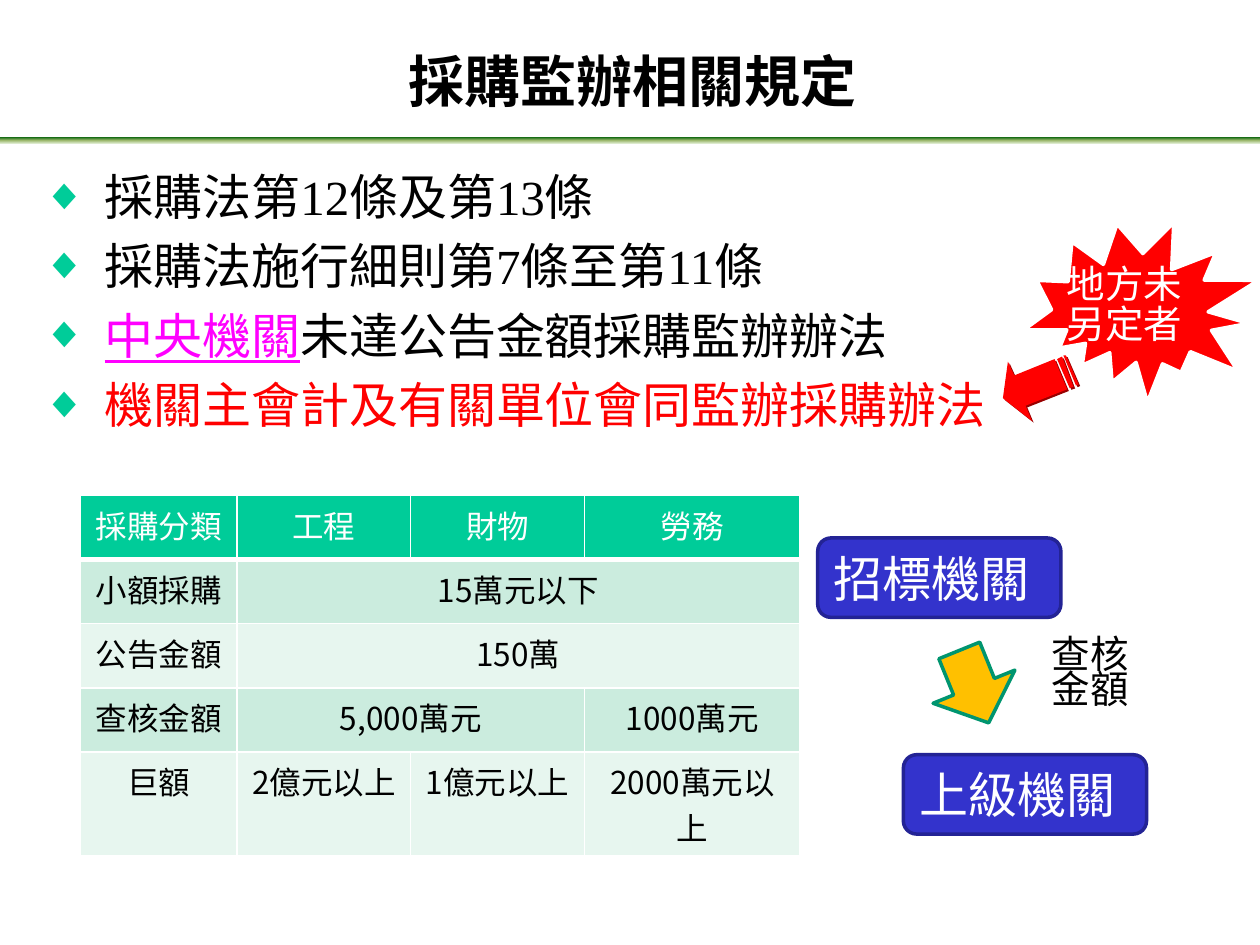
import copy
import pptx
import pptx.util
import pptx.dml.color
import pptx.enum.shapes
import pptx.enum.text
import pptx.oxml
import pptx.oxml.ns
import lxml.etree

Inches = pptx.util.Inches
Pt = pptx.util.Pt
RGB = pptx.dml.color.RGBColor.from_string
SHAPE = pptx.enum.shapes.MSO_SHAPE
ALIGN = pptx.enum.text.PP_ALIGN
ANCHOR = pptx.enum.text.MSO_ANCHOR
NO_FIT = pptx.enum.text.MSO_AUTO_SIZE.NONE
qn = pptx.oxml.ns.qn
SANS, SERIF, LABEL = "Noto Sans CJK SC", "Times New Roman", "Calibri"
COLORS = {
    "black": "000000", "white": "FFFFFF", "red": "FF0000", "magenta": "FF00FF",
    "teal": "00CC99", "teal_dark": "00956F", "mint": "CBECDE", "pale": "E7F6EF",
    "blue": "3333CC", "navy": "232395", "amber": "FFC000", "maroon": "990000",
    "rule_dark": "156B13", "rule_mid": "9CB86E", "rule_light": "DDEBCF",
}


def style(paragraph, size, font, color, align=ALIGN.LEFT):
    paragraph.alignment = align
    paragraph.font.size = Pt(size)
    paragraph.font.name = font
    paragraph.font.color.rgb = RGB(COLORS[color])


def add_shape(kind, box, fill, line=None, rotation=0):
    shape = slide.shapes.add_shape(kind, *map(Inches, box))
    shape.shadow.inherit = False
    shape.rotation = rotation
    shape.fill.solid()
    shape.fill.fore_color.rgb = RGB(COLORS[fill])
    if line:
        shape.line.color.rgb = RGB(COLORS[line])
        shape.line.width = Pt(2)
    else:
        shape.line.fill.background()
    return shape


deck = pptx.Presentation()
deck.slide_width, deck.slide_height = Inches(10), Inches(7.5)
slide = deck.slides.add_slide(deck.slide_layouts[1])

title_rule = add_shape(SHAPE.RECTANGLE, (0, 1.09, 10, 0.05), "rule_dark")
title_rule.fill.gradient()
title_rule.fill.gradient_angle = 270
stop_list = title_rule.element.xpath(".//a:gsLst")[0]
stop_list.insert(1, copy.deepcopy(stop_list[0]))
rule_stops = zip(title_rule.fill.gradient_stops, ("rule_dark", "rule_mid", "rule_light"))
for step, (stop, color) in enumerate(rule_stops):
    stop.position = step / 2
    stop.color.rgb = RGB(COLORS[color])

title = slide.shapes.title
title.left, title.top, title.width, title.height = map(Inches, (0.45, 0.32, 9.14, 0.95))
title.text_frame.text = "採購監辦相關規定"
title.text_frame.auto_size = NO_FIT
title.text_frame.vertical_anchor = ANCHOR.TOP
style(title.text_frame.paragraphs[0], 32, SANS, "black", ALIGN.CENTER)
title.text_frame.paragraphs[0].font.bold = True

regulations = slide.placeholders[1]
regulations.left, regulations.top, regulations.width, regulations.height = map(
    Inches, (0.24, 1.27, 9.06, 2.6))
regulations.text_frame.auto_size = NO_FIT
REGULATIONS = [
    [("採購法第12條及第13條", "black")],
    [("採購法施行細則第7條至第11條", "black")],
    [("中央機關", "magenta"), ("未達公告金額採購監辦辦法", "black")],
    [("機關主會計及有關單位會同監辦採購辦法", "red")],
]
for index, parts in enumerate(REGULATIONS):
    frame = regulations.text_frame
    regulation = frame.add_paragraph() if index else frame.paragraphs[0]
    regulation.space_before = Pt(6 if index else 0)
    properties = regulation._p.get_or_add_pPr()
    properties.set("marL", str(Inches(0.49)))
    properties.set("indent", str(-Inches(0.49)))
    bullet_color = lxml.etree.SubElement(properties, qn("a:buClr"))
    lxml.etree.SubElement(bullet_color, qn("a:srgbClr"), val=COLORS["teal"])
    lxml.etree.SubElement(properties, qn("a:buSzPct"), val="90000")
    lxml.etree.SubElement(properties, qn("a:buChar"), char="◆")
    style(regulation, 28, SERIF, parts[0][1], ALIGN.JUSTIFY)
    for words, color in parts:
        run = regulation.add_run()
        run.text = words
        if len(parts) > 1:
            run.font.color.rgb = RGB(COLORS[color])
            run.font.underline = color == "magenta"

THRESHOLDS = [
    ["採購分類", "工程", "財物", "勞務"],
    ["小額採購", "15萬元以下", "", ""],
    ["公告金額", "150萬", "", ""],
    ["查核金額", "5,000萬元", "", "1000萬元"],
    ["巨額", "2億元以上", "1億元以上", "2000萬元以上"],
]
thresholds = slide.shapes.add_table(
    5, 4, Inches(0.64), Inches(3.93), Inches(5.71), Inches(2.55)).table
for column, width in zip(thresholds.columns, (1.24, 1.38, 1.38, 1.71)):
    column.width = Inches(width)
for r, row in enumerate(THRESHOLDS):
    thresholds.rows[r].height = Inches(0.51)
    for c, words in enumerate(row):
        cell = thresholds.cell(r, c)
        cell.text = words
        style(cell.text_frame.paragraphs[0], 18, SANS, "black" if r else "white", ALIGN.CENTER)
        cell_properties = cell._tc.get_or_add_tcPr()
        for side in "LRTB":
            heavy = (r, side) in ((0, "B"), (1, "T"))
            border = lxml.etree.SubElement(
                cell_properties, qn(f"a:ln{side}"), w=str(Pt(3 if heavy else 1)))
            border_fill = lxml.etree.SubElement(border, qn("a:solidFill"))
            lxml.etree.SubElement(border_fill, qn("a:srgbClr"), val=COLORS["white"])
        cell.fill.solid()
        fill = "teal" if r == 0 else "mint" if r % 2 else "pale"
        cell.fill.fore_color.rgb = RGB(COLORS[fill])
for r, last in ((1, 3), (2, 3), (3, 2)):
    thresholds.cell(r, 1).merge(thresholds.cell(r, last))

for words, left, top in (("招標機關", 6.49, 4.27), ("上級機關", 7.17, 5.99)):
    agency = add_shape(SHAPE.ROUNDED_RECTANGLE, (left, top, 1.93, 0.63), "blue", "navy")
    agency.text_frame.text = words
    style(agency.text_frame.paragraphs[0], 28, SANS, "white")

add_shape(SHAPE.EXPLOSION2, (8.3, 1.6, 1.59, 1.76), "red", "white", 55.6)
add_shape(SHAPE.UP_ARROW, (7.38, 5.14, 0.7, 0.62), "amber", "teal_dark", 157.9)

LABELS = [
    ("地方未另定者", (8.37, 2.06, 1.2, 0.77), 23, "white"),
    ("查核金額", (8.25, 5.04, 0.88, 0.67), 20, "black"),
]
for words, box, spacing, color in LABELS:
    label = slide.shapes.add_textbox(*map(Inches, box)).text_frame
    label.word_wrap = True
    label.text = words
    label.paragraphs[0].line_spacing = Pt(spacing)
    style(label.paragraphs[0], 22, LABEL, color)

ARROW_HEAD = [(800, 287), (805, 298), (837, 285), (847, 309),
              (814, 322), (819, 334), (796, 316)]
ARROW_STRIPES = [
    [(843, 283), (852, 307), (849, 308), (839, 285)],
    [(846, 282), (856, 305), (854, 306), (844, 282)],
]
outline = slide.shapes.build_freeform(*ARROW_HEAD[0], scale=Inches(0.01))
outline.add_line_segments(ARROW_HEAD[1:])
for stripe in ARROW_STRIPES:
    outline.move_to(*stripe[0])
    outline.add_line_segments(stripe[1:])
striped_arrow = outline.convert_to_shape()
striped_arrow.shadow.inherit = False
striped_arrow.fill.solid()
striped_arrow.fill.fore_color.rgb = RGB(COLORS["red"])
striped_arrow.line.fill.background()
effects = striped_arrow.element.xpath(".//a:effectLst")[0]
shadow = lxml.etree.SubElement(
    effects, qn("a:outerShdw"), dist=str(Pt(1.4)), dir="2700000")
lxml.etree.SubElement(shadow, qn("a:srgbClr"), val=COLORS["maroon"])

deck.save("out.pptx")
